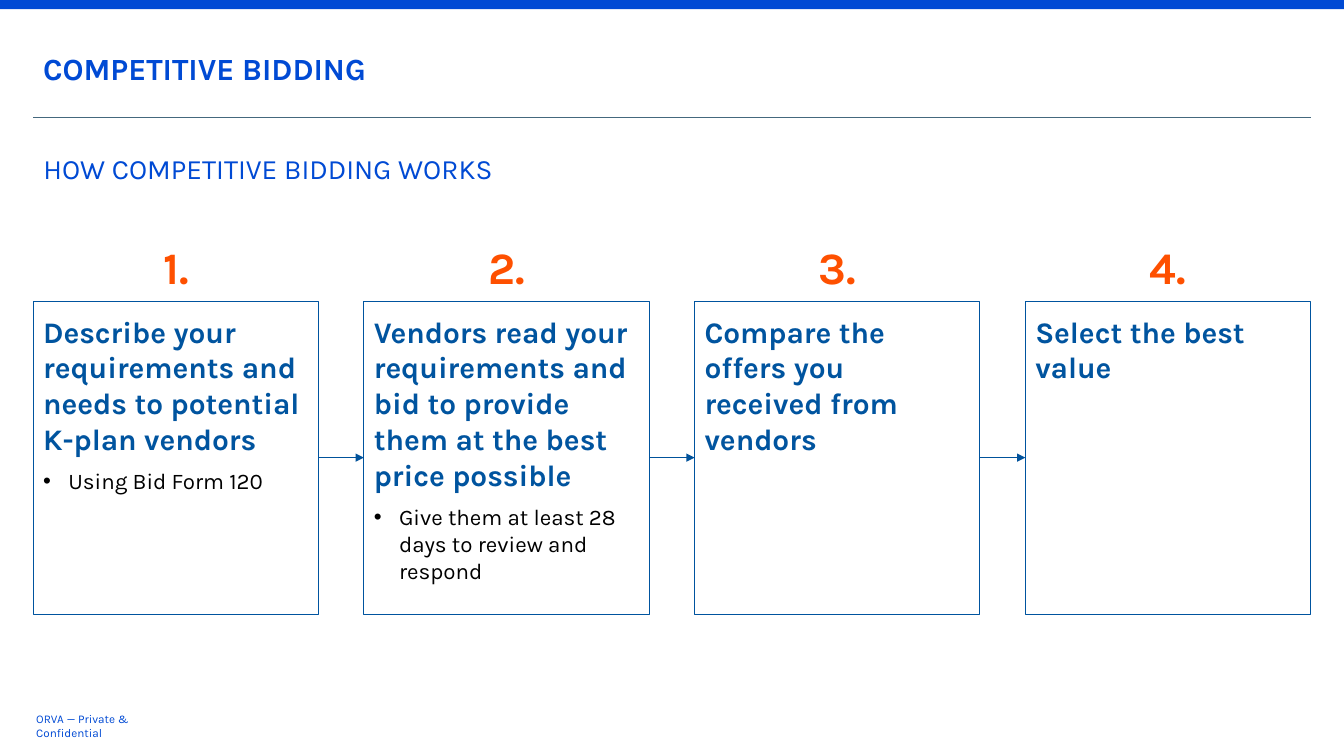
from pptx import Presentation
from pptx import util as u
from pptx.dml import color
from pptx.enum import shapes, text
from pptx.oxml import ns
from lxml import etree

FONT = "Karla"
BLUE = "004AD4"
NAVY = "00549F"
ORANGE = "FE5000"
MARGIN = 0.33
CARD_WIDTH = 2.83
CARD_PITCH = 3.28

STEPS = [
    ("Describe your requirements and needs to potential\vK-plan vendors", "Using Bid Form 120"),
    ("Vendors read your requirements and bid to provide them at the best price possible",
     "Give them at least 28 days to review and respond"),
    ("Compare the offers you received from vendors", None),
    ("Select the best value", None),
]


def paint(target, value):
    target.rgb = color.RGBColor.from_string(value)


def write(para, words, size, shade, bold=False):
    for index, line in enumerate(words.split("\v")):
        if index:
            para.add_line_break()
        span = para.add_run()
        span.text = line
        span.font.name = FONT
        span.font.size = u.Pt(size)
        span.font.bold = bold
        paint(span.font.color, shade)


def add_text_box(page, left, top, width, height):
    box = page.shapes.add_textbox(*map(u.Inches, (left, top, width, height)))
    box.text_frame.word_wrap = True
    return box.text_frame


def add_rectangle(page, left, top, width, height, fill, line=None):
    box = page.shapes.add_shape(shapes.MSO_SHAPE.RECTANGLE,
                                *map(u.Inches, (left, top, width, height)))
    box.shadow.inherit = False
    box.fill.solid()
    paint(box.fill.fore_color, fill)
    if line:
        paint(box.line.color, line)
        box.line.width = u.Pt(0.75)
    else:
        box.line.fill.background()


def add_line(page, left, right, top, shade, width, arrow=False):
    line = page.shapes.add_connector(shapes.MSO_CONNECTOR.STRAIGHT,
                                     *map(u.Inches, (left, top, right, top)))
    paint(line.line.color, shade)
    line.line.width = u.Pt(width)
    if arrow:
        etree.SubElement(line.line._get_or_add_ln(), ns.qn("a:tailEnd"), type="triangle")
    etree.SubElement(line._element.spPr, ns.qn("a:effectLst"))


def add_bullet(para):
    properties = para._p.get_or_add_pPr()
    properties.set("marL", str(u.Inches(0.25)))
    properties.set("indent", str(u.Inches(-0.25)))
    etree.SubElement(properties, ns.qn("a:buFont"), typeface="Arial")
    etree.SubElement(properties, ns.qn("a:buChar"), char="•")


def build_header(page, left, top, width):
    add_rectangle(page, 0, 0, 13.33, 0.09, BLUE)
    add_line(page, left, left + width, top + 0.84, "44687D", 0.75)
    section = add_text_box(page, left, top, width, 0.69)
    section.vertical_anchor = text.MSO_ANCHOR.MIDDLE
    write(section.paragraphs[0], "COMPETITIVE BIDDING", 22, BLUE, True)

    title = page.shapes.title
    title.left, title.top, title.width, title.height = map(
        u.Inches, (left, top + 1, width, 0.67))
    title.text_frame.vertical_anchor = text.MSO_ANCHOR.MIDDLE
    title.text_frame.word_wrap = True
    para = title.text_frame.paragraphs[0]
    para.alignment = text.PP_ALIGN.LEFT
    write(para, "HOW COMPETITIVE BIDDING WORKS", 20, BLUE)


def build_step(page, left, top, number, heading, detail):
    add_rectangle(page, left, top + 0.66, CARD_WIDTH, 3.11, "FFFFFF", NAVY)
    label = add_text_box(page, left, top, CARD_WIDTH, 0.64).paragraphs[0]
    label.alignment = text.PP_ALIGN.CENTER
    write(label, f"{number}.", 32, ORANGE, True)

    body = add_text_box(page, left, top + 0.73, CARD_WIDTH, 2.55)
    body.margin_right = u.Inches(0.14)
    write(body.paragraphs[0], heading, 21.3, NAVY, True)
    if detail:
        body.paragraphs[0].space_after = u.Pt(8)
        para = body.add_paragraph()
        add_bullet(para)
        write(para, detail, 16, "000000")


def build_process(page, left, top):
    for index, (heading, detail) in enumerate(STEPS):
        card_left = left + index * CARD_PITCH
        build_step(page, card_left, top, index + 1, heading, detail)
        if index:
            add_line(page, card_left - CARD_PITCH + CARD_WIDTH, card_left,
                     top + 2.21, "00529B", 0.75, arrow=True)


def build_footer(page, left, top):
    frame = add_text_box(page, left, top, 1.56, 0.2)
    frame.vertical_anchor = text.MSO_ANCHOR.MIDDLE
    frame.margin_left = frame.margin_right = u.Inches(0.03)
    frame.margin_top = frame.margin_bottom = u.Inches(0.03)
    write(frame.paragraphs[0], "ORVA — Private & Confidential", 8.4, BLUE)


def main():
    deck = Presentation()
    deck.slide_width, deck.slide_height = u.Inches(13.33), u.Inches(7.5)
    page = deck.slides.add_slide(deck.slide_layouts[5])
    build_header(page, MARGIN, 0.33, 12.67)
    build_process(page, MARGIN, 2.33)
    build_footer(page, MARGIN, 7.1)
    deck.save("out.pptx")


if __name__ == "__main__":
    main()
